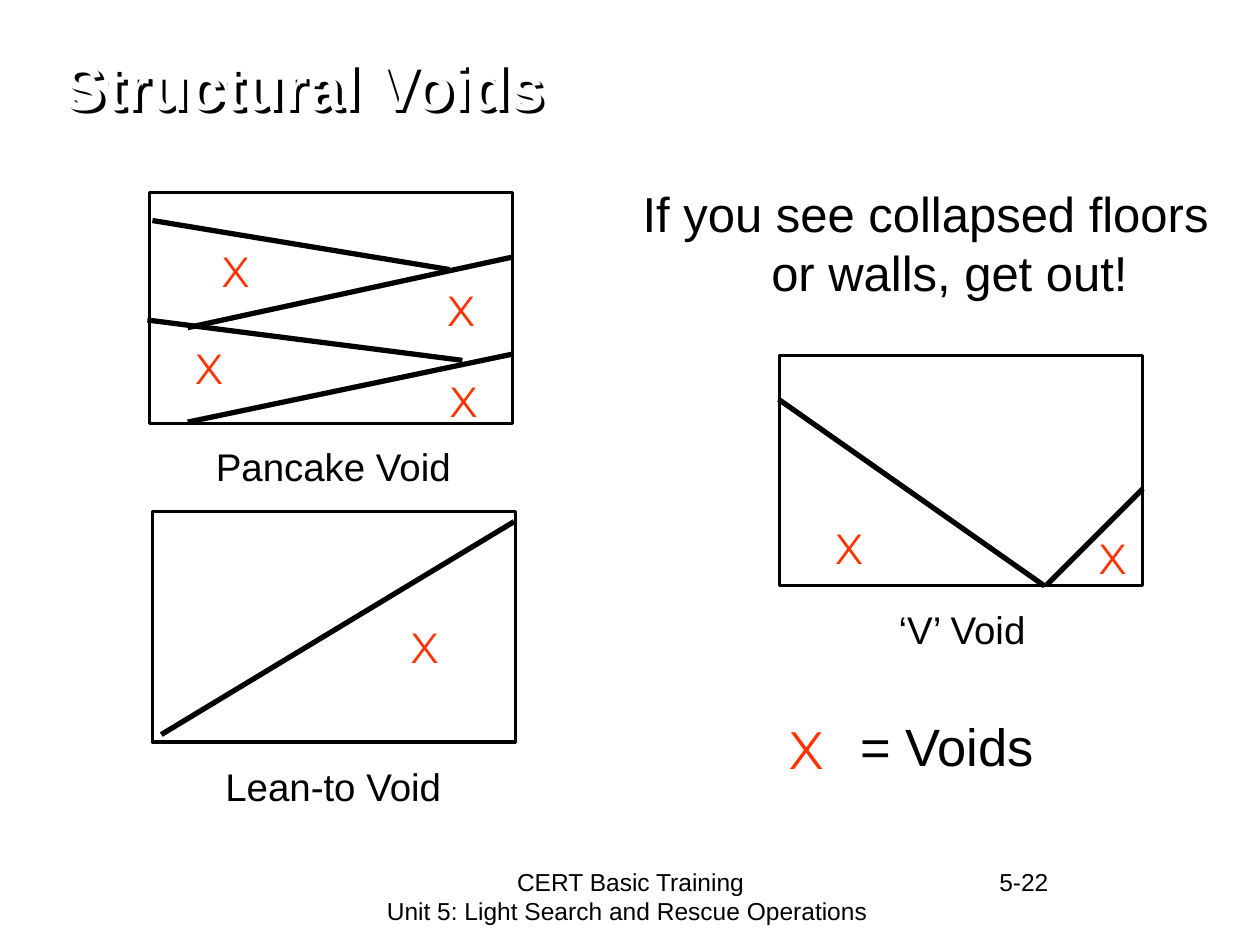
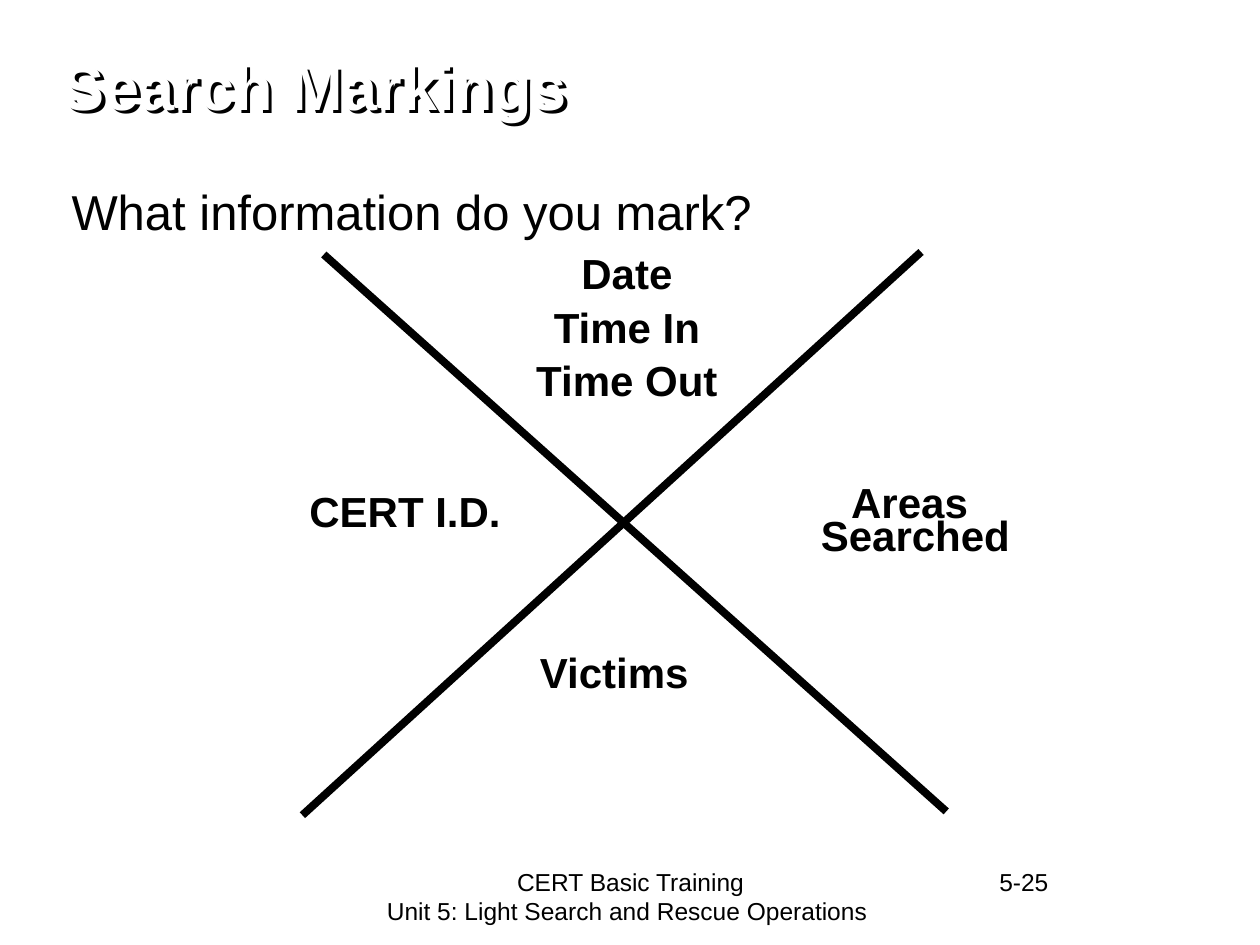
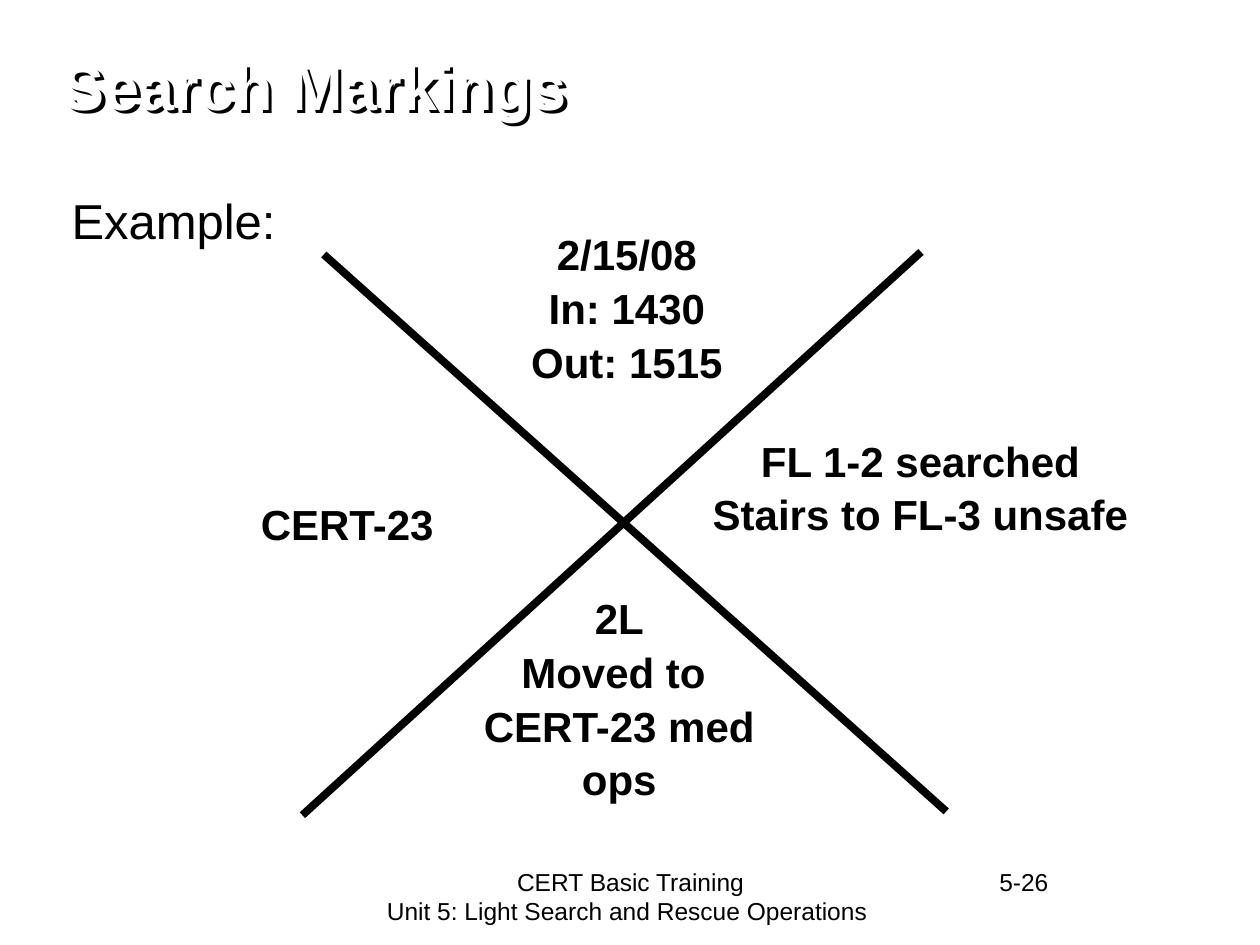
from dataclasses import dataclass

from lxml.etree import SubElement
from pptx import Presentation
from pptx.dml.color import RGBColor
from pptx.enum.shapes import MSO_CONNECTOR, MSO_SHAPE
from pptx.enum.text import MSO_ANCHOR, PP_ALIGN
from pptx.oxml import parse_xml
from pptx.oxml.ns import qn
from pptx.util import Inches, Pt


@dataclass(frozen=True)
class Theme:
    ink: str = "000000"
    paper: str = "FFFFFF"
    void: str = "FF3300"
    font: str = "Arial"
    mark_font: str = "Montserrat"
    title: int = 36
    key: int = 30
    body: int = 28
    mark: int = 24
    caption: int = 22
    footer: int = 14
    outline: float = 1.75
    slab: float = 3
    cross: float = 4.5


THEME = Theme()
SHADOW = (
    '<a:effectLst xmlns:a="http://schemas.openxmlformats.org/drawingml/2006/main">'
    '<a:outerShdw dist="35921" dir="2700000" algn="ctr" rotWithShape="0">'
    f'<a:srgbClr val="{THEME.ink}"/></a:outerShdw></a:effectLst>'
)

FOOTER = ["CERT Basic Training", "Unit 5: Light Search and Rescue Operations "]

WARNING = "If you see collapsed floors or walls, get out!"
FRAME_SIZE = (2.88, 1.83)
CAPTION_SIZE = (2.51, 0.47)
VOIDS = [
    {
        "caption": "Pancake Void",
        "frame": (1.19, 1.53),
        "caption_at": (1.39, 3.47),
        "slabs": [
            ((1.21, 1.75), (3.57, 2.14)),
            ((4.07, 2.04), (1.49, 2.6)),
            ((1.17, 2.54), (3.67, 2.86)),
            ((4.07, 2.81), (1.49, 3.35)),
        ],
        "marks": [(1.57, 1.9), (3.36, 2.21), (1.36, 2.67), (3.38, 2.93)],
    },
    {
        "caption": "‘V’ Void",
        "frame": (6.19, 2.82),
        "caption_at": (6.38, 4.76),
        "slabs": [((6.18, 3.17), (8.29, 4.65)), ((8.31, 4.64), (9.07, 3.88))],
        "marks": [(8.53, 4.18), (6.44, 4.1)],
    },
    {
        "caption": "Lean-to Void",
        "frame": (1.21, 4.06),
        "caption_at": (1.39, 6.01),
        "slabs": [((1.28, 5.83), (4.08, 4.14))],
        "marks": [(3.07, 4.88)],
    },
]

CROSS = [((2.57, 2.02), (7.51, 6.44)), ((2.4, 6.47), (7.31, 2))]
SECTOR_WIDTH = 4.31
MARKINGS = [
    {
        "number": "5-25",
        "prompt": ("What information do you mark?", 1.39),
        "sectors": [
            ((1.06, 3.93), 0.82, ["CERT I.D."]),
            ((5.11, 3.86), 0.64, ["Areas \vSearched"]),
            ((2.82, 2.04), 1.28, ["Date", "Time In", "Time Out"]),
            ((2.72, 5.21), 0.38, ["Victims"]),
        ],
    },
    {
        "number": "5-26",
        "prompt": ("Example:", 1.46),
        "sectors": [
            ((0.6, 4.03), 0.36, ["CERT-23"]),
            ((5.15, 3.53), 0.82, ["FL 1-2 searched", "Stairs to FL-3 unsafe"]),
            ((2.82, 1.89), 1.28, ["2/15/08", "In: 1430", "Out: 1515"]),
            ((2.76, 4.78), 1.74, ["2L", "Moved to ", "CERT-23 med", "ops"]),
        ],
    },
]


def apply(target, values):
    for name, value in values.items():
        setattr(target, name, value)


def add_text(page, place, lines, size, color=THEME.ink, font=THEME.font,
             bold=False, gap=0, anchor=MSO_ANCHOR.TOP, **layout):
    box = page.shapes.add_textbox(*map(Inches, place))
    frame = box.text_frame
    apply(frame, {"word_wrap": True, "vertical_anchor": anchor})
    for index, line in enumerate(lines):
        para = frame.add_paragraph() if index else frame.paragraphs[0]
        para.text = line
        apply(para, layout)
        if index and gap:
            para.space_before = Pt(gap)
        for span in para.runs:
            apply(span.font, {"name": font, "size": Pt(size), "bold": bold})
            span.font.color.rgb = RGBColor.from_string(color)
    return box


def add_line(page, start, end, width):
    line = page.shapes.add_connector(
        MSO_CONNECTOR.STRAIGHT, *map(Inches, (*start, *end)))
    line.line.color.rgb = RGBColor.from_string(THEME.ink)
    line.line.width = Pt(width)
    SubElement(line._element.spPr, qn("a:effectLst"))


def add_frame(page, place):
    frame = page.shapes.add_shape(
        MSO_SHAPE.RECTANGLE, *map(Inches, (*place, *FRAME_SIZE)))
    frame.shadow.inherit = False
    frame.fill.background()
    frame.line.color.rgb = RGBColor.from_string(THEME.ink)
    frame.line.width = Pt(THEME.outline)


def add_mark(page, place, height=0.5, size=THEME.mark):
    add_text(page, (*place, 0.6, height), ["X"], size, THEME.void,
             THEME.mark_font, alignment=PP_ALIGN.CENTER)


def add_page(deck, title, number):
    page = deck.slides.add_slide(deck.slide_layouts[6])
    heading = add_text(page, (0.4, 0.3, 9, 0.75), [title], THEME.title,
                       THEME.paper, bold=True, anchor=MSO_ANCHOR.MIDDLE)
    heading._element.spPr.append(parse_xml(SHADOW))
    add_text(page, (2.92, 6.83, 4.17, 0.52), FOOTER, THEME.footer,
             alignment=PP_ALIGN.CENTER)
    add_text(page, (6.66, 6.83, 1.76, 0.52), [number], THEME.footer,
             alignment=PP_ALIGN.RIGHT)
    return page


def indent(box, margin, first):
    properties = box.text_frame.paragraphs[0]._p.get_or_add_pPr()
    properties.set("marL", str(Inches(margin)))
    properties.set("indent", str(Inches(first)))


def build_voids(deck):
    page = add_page(deck, "Structural Voids", "5-22")
    warning = add_text(page, (4.9, 1.41, 4.89, 1.12), [WARNING], THEME.body,
                       alignment=PP_ALIGN.CENTER)
    indent(warning, 0.38, -0.38)
    for void in VOIDS:
        add_frame(page, void["frame"])
        for start, end in void["slabs"]:
            add_line(page, start, end, THEME.slab)
        add_text(page, (*void["caption_at"], *CAPTION_SIZE), [void["caption"]],
                 THEME.caption, alignment=PP_ALIGN.CENTER)
        for place in void["marks"]:
            add_mark(page, place)
    add_mark(page, (6.1, 5.64), 0.6, THEME.key)
    legend = add_text(page, (6.61, 5.62, 3.35, 0.6), ["= Voids"], THEME.key)
    indent(legend, 0.12, 0)


def build_marking(deck, marking):
    page = add_page(deck, "Search Markings", marking["number"])
    prompt, top = marking["prompt"]
    add_text(page, (0.47, top, 6.83, 0.57), [prompt], THEME.body)
    for start, end in CROSS:
        add_line(page, start, end, THEME.cross)
    for place, height, lines in marking["sectors"]:
        add_text(page, (*place, SECTOR_WIDTH, height), lines, THEME.mark,
                 bold=True, gap=12, alignment=PP_ALIGN.CENTER,
                 line_spacing=0.65)


def main():
    deck = Presentation()
    apply(deck, {"slide_width": Inches(10), "slide_height": Inches(7.5)})
    build_voids(deck)
    for marking in MARKINGS:
        build_marking(deck, marking)
    deck.save("out.pptx")


if __name__ == "__main__":
    main()
